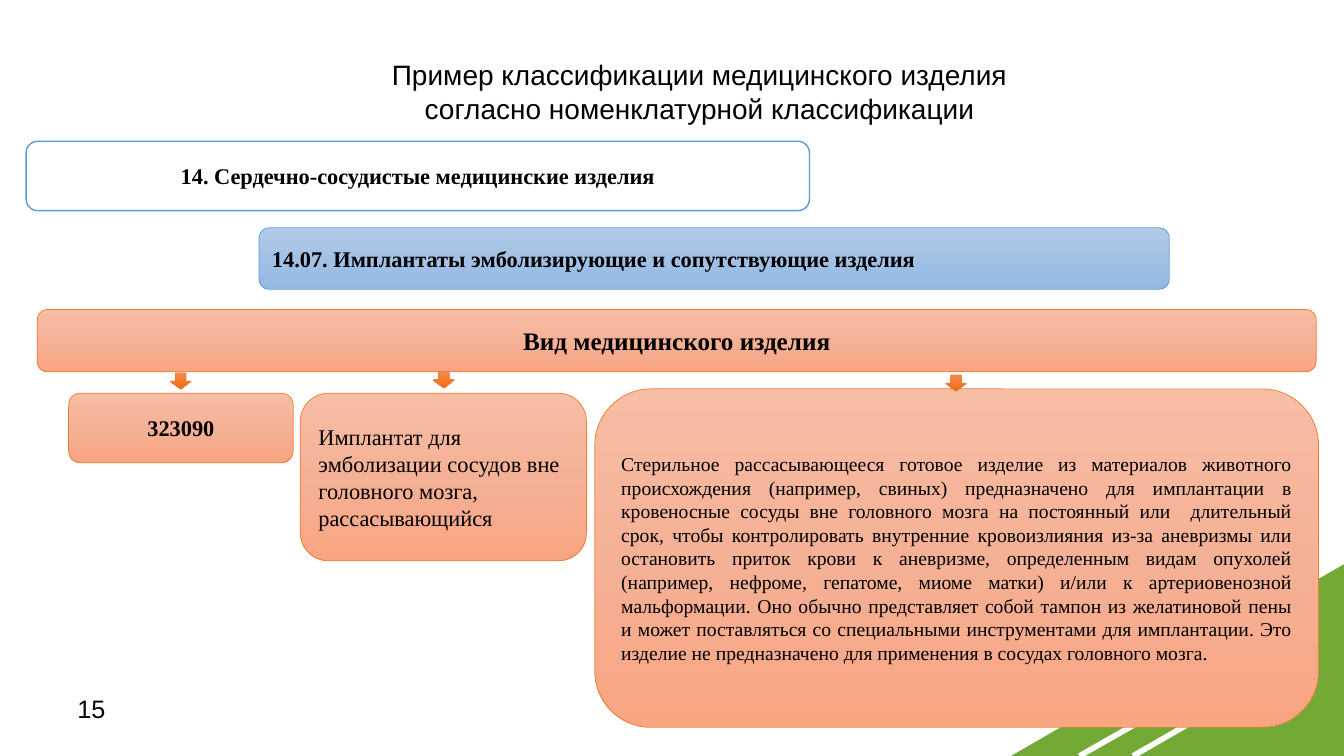
from copy import deepcopy

from lxml import etree
from pptx import Presentation
from pptx.dml.color import RGBColor
from pptx.enum.shapes import MSO_CONNECTOR, MSO_SHAPE
from pptx.enum.text import MSO_ANCHOR, PP_ALIGN
from pptx.oxml.ns import qn
from pptx.util import Cm, Pt

ROUNDED = MSO_SHAPE.ROUNDED_RECTANGLE
ARROW = MSO_SHAPE.DOWN_ARROW
TRIANGLE = MSO_SHAPE.RIGHT_TRIANGLE
STRAIGHT = MSO_CONNECTOR.STRAIGHT
MIDDLE, TOP = MSO_ANCHOR.MIDDLE, MSO_ANCHOR.TOP
LEFT, CENTER, JUSTIFY = PP_ALIGN.LEFT, PP_ALIGN.CENTER, PP_ALIGN.JUSTIFY

BLACK = RGBColor(0x00, 0x00, 0x00)
WHITE = RGBColor(0xFF, 0xFF, 0xFF)
GREEN = RGBColor(0x71, 0xA9, 0x34)
BLUE = RGBColor(0x5B, 0x9B, 0xD5)
ORANGE = RGBColor(0xED, 0x7D, 0x31)
PEACH_FADE = (RGBColor(0xF7, 0xBD, 0xA5), RGBColor(0xF5, 0xB1, 0x96), RGBColor(0xF8, 0xA5, 0x82))
BLUE_FADE = (RGBColor(0xB1, 0xCB, 0xE9), RGBColor(0xA3, 0xC1, 0xE5), RGBColor(0x93, 0xB9, 0xE4))
ORANGE_FADE = (RGBColor(0xF1, 0x8C, 0x57), RGBColor(0xF6, 0x7B, 0x28), RGBColor(0xE5, 0x6C, 0x19))

SANS, SERIF = "Arial", "Times New Roman"

TITLE = ["Пример классификации медицинского изделия", "согласно номенклатурной классификации"]
TITLE_PLACE = (1.83, 0.89, 31.6, 2.82)
NUMBER = "15"
NUMBER_PLACE = (1.7, 17.35, 7.9, 1.32)

DESCRIPTION = (
    "Стерильное рассасывающееся готовое изделие из материалов животного происхождения "
    "(например, свиных) предназначено для имплантации в кровеносные сосуды вне головного "
    "мозга на постоянный или  длительный срок, чтобы контролировать внутренние кровоизлияния "
    "из-за аневризмы или остановить приток крови к аневризме, определенным видам опухолей "
    "(например, нефроме, гепатоме, миоме матки) и/или к артериовенозной мальформации. "
    "Оно обычно представляет собой тампон из желатиновой пены и может поставляться со "
    "специальными инструментами для имплантации. Это изделие не предназначено для применения "
    "в сосудах головного мозга."
)

CARDS = [
    ("Имплантат для эмболизации сосудов вне головного мозга, рассасывающийся",
     (7.57, 9.91, 7.21, 4.22), PEACH_FADE, ORANGE, 0.5, LEFT, 16, False),
    ("323090", (1.73, 9.91, 5.66, 1.75), PEACH_FADE, ORANGE, 0.5, CENTER, 16, True),
    ("14. Сердечно-сосудистые медицинские изделия",
     (0.66, 3.56, 19.74, 1.75), (WHITE,), BLUE, 1, CENTER, 16, True),
    ("14.07. Имплантаты эмболизирующие и сопутствующие изделия",
     (6.53, 5.74, 22.94, 1.55), BLUE_FADE, BLUE, 0.5, LEFT, 16, True),
    ("Вид медицинского изделия",
     (0.94, 7.8, 32.23, 1.57), PEACH_FADE, ORANGE, 0.5, CENTER, 18, True),
    (DESCRIPTION, (14.99, 9.8, 18.24, 8.53), PEACH_FADE, ORANGE, 0.5, JUSTIFY, 14, False),
]

ARROW_CORNERS = [(4.29, 9.4), (10.92, 9.37), (23.83, 9.45)]
ARROW_SIZE = (0.53, 0.41)

CORNER_PLACE = (25.48, 14.22, 8.39, 4.83)
STRIPES = [(27.2, 19.05, 29.87, 17.53), (28.55, 19.05, 32.79, 16.61)]


def lengths(values):
    return [Cm(value) for value in values]


def paint(shape, colours):
    if len(colours) == 1:
        shape.fill.solid()
        shape.fill.fore_color.rgb = colours[0]
        return
    shape.fill.gradient()
    shape.fill.gradient_angle = 270
    stop_list = shape.element.spPr.find(qn("a:gradFill")).find(qn("a:gsLst"))
    stop_list.insert(1, deepcopy(stop_list[0]))
    for index, (stop, colour) in enumerate(zip(shape.fill.gradient_stops, colours)):
        stop.position = index / (len(colours) - 1)
        stop.color.rgb = colour


def add_figure(page, kind, place, colours, outline=None, weight=0):
    shape = page.shapes.add_shape(kind, *lengths(place))
    shape.shadow.inherit = False
    paint(shape, colours)
    if outline is None:
        shape.line.fill.background()
    else:
        shape.line.color.rgb = outline
        shape.line.width = Pt(weight)
    return shape


def write(box, lines, align, size, font, bold=False, anchor=MIDDLE):
    frame = box.text_frame
    frame.word_wrap = True
    frame.vertical_anchor = anchor
    for index, line in enumerate(lines):
        para = frame.add_paragraph() if index else frame.paragraphs[0]
        para.alignment = align
        span = para.add_run()
        span.text = line
        span.font.name = font
        span.font.size = Pt(size)
        span.font.bold = bold
        span.font.color.rgb = BLACK


def add_corner(page):
    corner = add_figure(page, TRIANGLE, CORNER_PLACE, (GREEN,))
    corner.element.spPr.find(qn("a:xfrm")).set("flipH", "1")
    for stripe in STRIPES:
        line = page.shapes.add_connector(STRAIGHT, *lengths(stripe))
        line.line.color.rgb = WHITE
        line.line.width = Pt(4)
        etree.SubElement(line.element.spPr, qn("a:effectLst"))


def main():
    deck = Presentation()
    deck.slide_width, deck.slide_height = Cm(33.87), Cm(19.05)
    page = deck.slides.add_slide(deck.slide_layouts[5])

    add_corner(page)

    title = page.shapes.title
    title.left, title.top, title.width, title.height = lengths(TITLE_PLACE)
    write(title, TITLE, CENTER, 20, SANS)

    for text, place, colours, outline, weight, align, size, bold in CARDS:
        card = add_figure(page, ROUNDED, place, colours, outline, weight)
        write(card, [text], align, size, SERIF, bold)

    for corner in ARROW_CORNERS:
        add_figure(page, ARROW, corner + ARROW_SIZE, ORANGE_FADE, ORANGE, 0.5)

    number = page.shapes.add_textbox(*lengths(NUMBER_PLACE))
    write(number, [NUMBER], LEFT, 18, SANS, anchor=TOP)

    deck.save("out.pptx")


if __name__ == "__main__":
    main()
